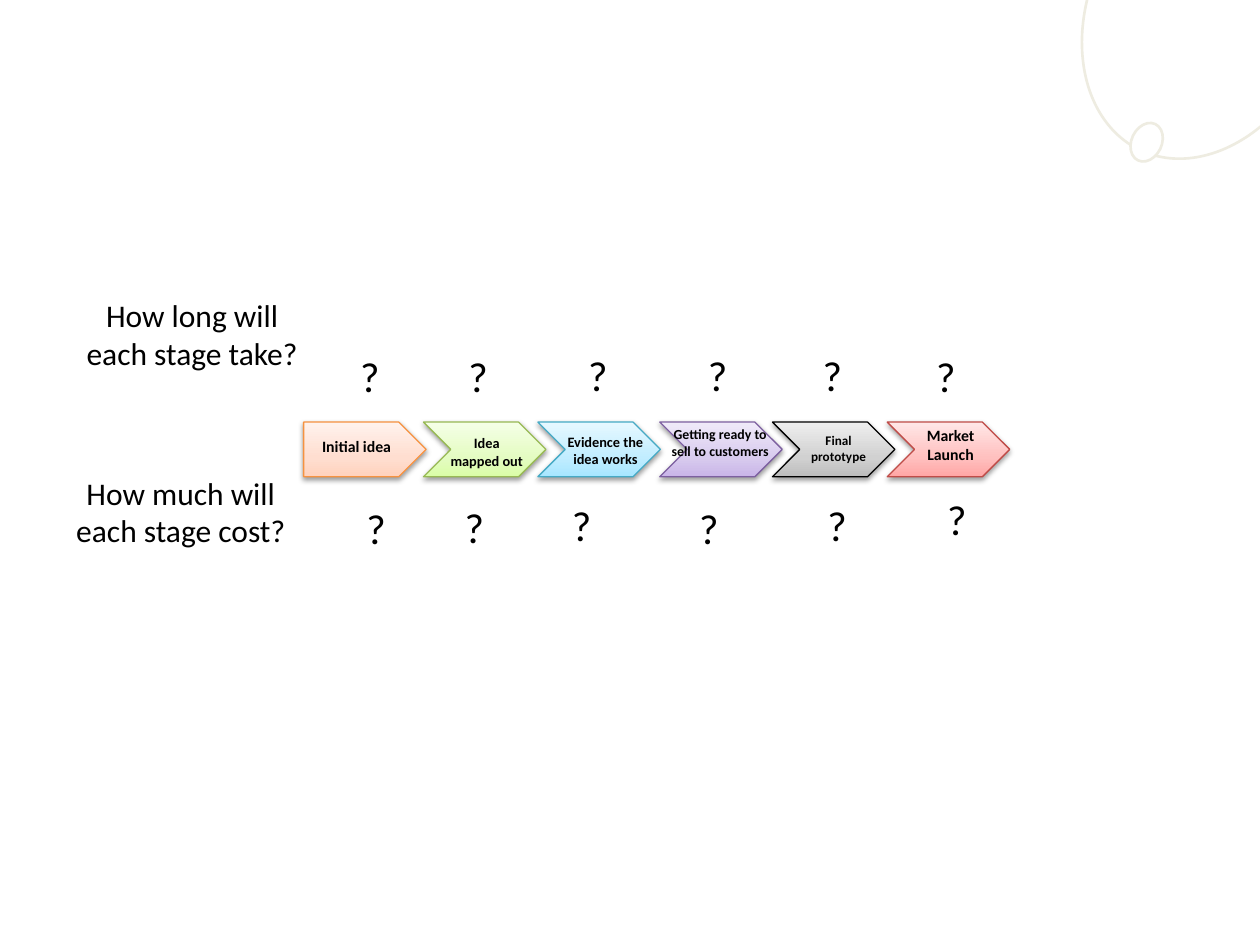
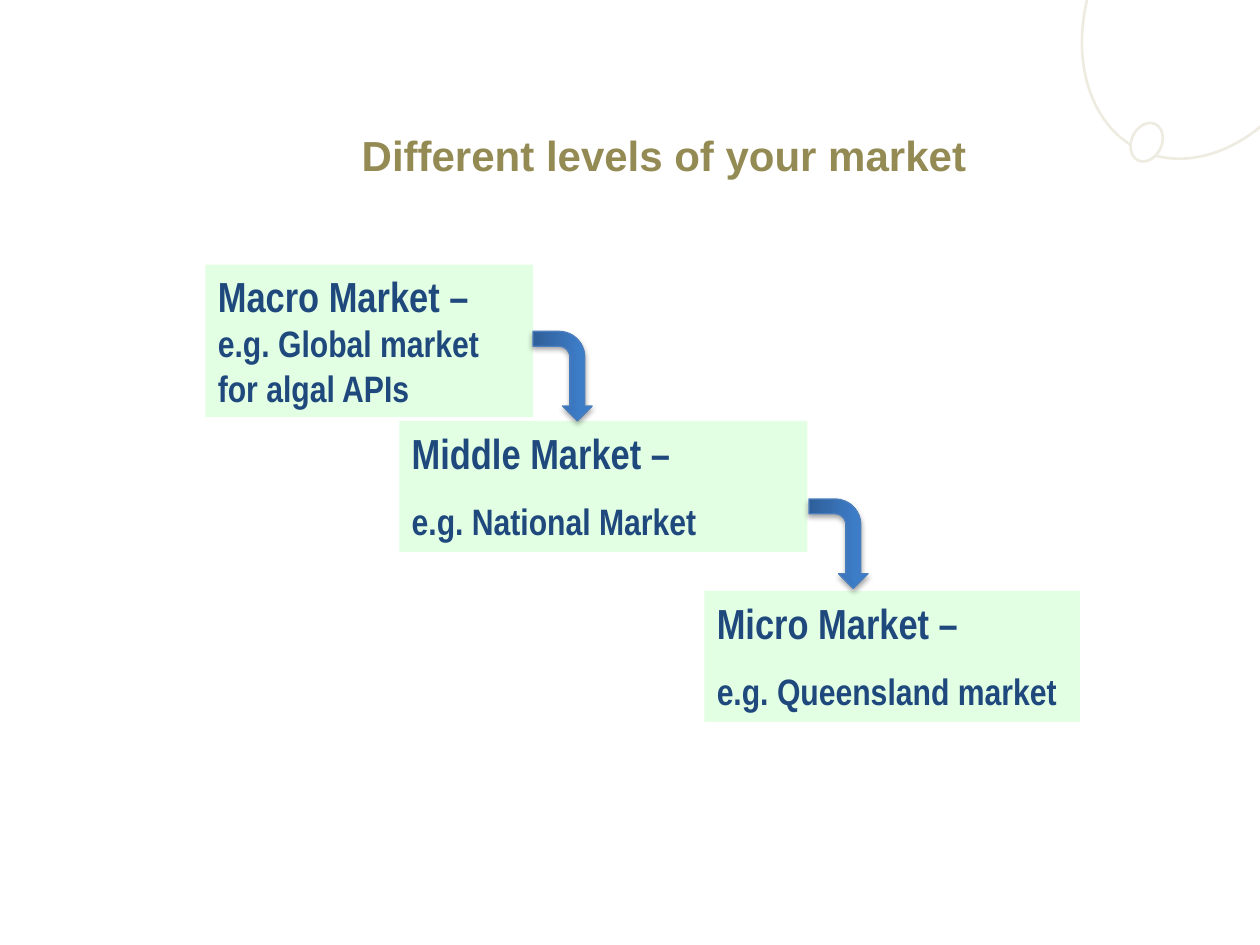
from copy import deepcopy
from lxml.etree import SubElement
from pptx import Presentation
from pptx.dml.color import RGBColor
from pptx.enum.shapes import MSO_SHAPE
from pptx.enum.text import MSO_ANCHOR, PP_ALIGN
from pptx.oxml.ns import qn
from pptx.util import Pt

RINGS = [(622.8, -82.8, 133.2, 177.1, None), (646.6, 69.8, 17.3, 23, "FFFFFF")]
RING = "EEECE1"

STAGES = [
    (173.5, ("FFD2BD", "FFDED0", "FFF2ED"), "F69240",
     "Initial idea", (173.5, 246.2, 60.5, 18), 9),
    (242, ("DAFDA7", "E4FCC2", "F5FFE7"), "98B955",
     "Idea mapped out", (249, 244.8, 58.3, 27.4), 8.2),
    (307.4, ("A7E6FF", "C1EDFF", "E7F8FF"), "46AAC5",
     "Evidence the idea works", (311, 244, 70, 27.4), 8.2),
    (377, ("C9B5E8", "D8CBEE", "F0EAF9"), "7D60A0",
     "Getting ready to sell to customers", (376.5, 239.8, 70, 36), 7.9),
    (441.4, ("BDBDBD", "D1D1D1", "EEEEEE"), "000000",
     "Final\nprototype", (444.2, 243.4, 70, 25.2), 7.5),
    (507, ("FFA6A5", "FFC0BF", "FFE7E7"), "BF4C48",
     "Market Launch", (514, 239.8, 58.3, 28.8), 9),
]
ASKS = [
    ("How long will each stage take?", (39.6, 165.6, 140.4, 51)),
    ("How much will each stage cost?", (33.1, 267.1, 140.4, 51)),
]
MARKS = [
    (198.7, 196.5), (260.6, 196.5), (329, 196), (397.4, 196),
    (463, 196), (527.8, 196.5), (202.3, 283.7), (258.5, 283),
    (319.7, 282.2), (392.4, 283.7), (465.8, 282.2), (534.2, 278.6),
]

TITLE = "Different levels of your market"
LEVELS = [
    ((228.2, 240.5, 233.3, 74.9), [["Middle Market –"], ["e.g. National Market"]]),
    ((402.5, 337.7, 214.6, 74.9), [["Micro Market –"], ["e.g. Queensland market"]]),
    ((117.4, 151.2, 187.2, 87.1),
     [["Macro Market – ", "e.g. Global market for algal APIs"]]),
]
BENDS = [(295.9, 198), (453.6, 293.8)]
BLUES = ("2F5F99", "3D7CC7", "3A7CCB")


def tint(code):
    return RGBColor.from_string(code)


def apply(thing, form):
    for key, val in form.items():
        setattr(thing, key, val)


def style(font, face, size, code, bold=False):
    apply(font, {"name": face, "size": Pt(size), "bold": bold})
    font.color.rgb = tint(code)


def draw(slide, kind, box, fill=None, line=None, width=0.75, turn=0):
    item = slide.shapes.add_shape(kind, *map(Pt, box))
    item.rotation = turn
    item.shadow.inherit = False
    if fill:
        item.fill.solid()
        item.fill.fore_color.rgb = tint(fill)
    else:
        item.fill.background()
    if line:
        item.line.color.rgb = tint(line)
        item.line.width = Pt(width)
    else:
        item.line.fill.background()
    return item


def child(node, tag, **vals):
    return SubElement(node, qn(tag), {key: str(val) for key, val in vals.items()})


def shade(item, codes, spots, drop, dark):
    item.fill.gradient()
    item.fill.gradient_angle = 90
    stops = item.element.find(".//" + qn("a:gsLst"))
    stops.append(deepcopy(stops[0]))
    for stop, code, spot in zip(item.fill.gradient_stops, codes, spots):
        stop.color.rgb = tint(code)
        stop.position = spot
    cast = child(item.element.find(".//" + qn("a:effectLst")), "a:outerShdw",
                 blurRad=Pt(3.1), dist=Pt(drop), dir=5400000, rotWithShape=0)
    child(child(cast, "a:srgbClr", val="000000"), "a:alpha", val=dark * 1000)


def write(slide, text, box, size, bold=False, side=PP_ALIGN.CENTER):
    frame = slide.shapes.add_textbox(*map(Pt, box)).text_frame
    apply(frame, {"word_wrap": True, "text": text})
    for para in frame.paragraphs:
        para.alignment = side
        style(para.font, "Calibri", size, "000000", bold)


def rings(deck, slide):
    for *box, fill in RINGS:
        ring = draw(slide, MSO_SHAPE.OVAL, box, fill, RING, 1.5, 25.4)
        deck.slide_master.shapes.element.append(ring.element)


def plan(slide):
    for spot, (left, codes, edge, text, box, size) in enumerate(STAGES):
        kind = MSO_SHAPE.CHEVRON if spot else MSO_SHAPE.PENTAGON
        step = draw(slide, kind, (left, 241.2, 70, 31.2), None, edge)
        shade(step, codes, (0, 0.35, 1), 1.6, 38)
        write(slide, text, box, size, True)
    for text, box in ASKS:
        write(slide, text, box, 18)
    for left, top in MARKS:
        write(slide, "?", (left, top, 28, 36), 24, side=PP_ALIGN.LEFT)


def levels(slide):
    head = slide.shapes.title
    apply(head, dict(zip(("left", "top", "width", "height"),
                         map(Pt, (86.4, 43.2, 586, 90)))))
    apply(head.text_frame, {"text": TITLE, "vertical_anchor": MSO_ANCHOR.MIDDLE})
    para = head.text_frame.paragraphs[0]
    para.alignment = PP_ALIGN.CENTER
    style(para.runs[0].font, "Arial", 24, "948A54", True)

    for box, paras in LEVELS:
        card = draw(slide, MSO_SHAPE.RECTANGLE, box, "CCFFCC")
        child(card.element.spPr.find(".//" + qn("a:srgbClr")), "a:alpha", val=54000)
        frame = card.text_frame
        apply(frame, {"word_wrap": True, "vertical_anchor": MSO_ANCHOR.TOP})
        sizes = iter((24, 21))
        for spot, parts in enumerate(paras):
            para = frame.add_paragraph() if spot else frame.paragraphs[0]
            apply(para, {"alignment": PP_ALIGN.LEFT, "space_before": Pt(12 * spot)})
            for part in parts:
                run = para.add_run()
                run.text = part
                style(run.font, "Arial Narrow", next(sizes), "1F497D", True)

    for left, top in BENDS:
        bend = draw(slide, MSO_SHAPE.BENT_ARROW, (left, top, 51.1, 33.8),
                    None, "4B7EBC", turn=90)
        shade(bend, BLUES, (0, 0.8, 1), 1.8, 35)


def main():
    deck = Presentation()
    apply(deck, {"slide_width": Pt(720), "slide_height": Pt(540)})
    first = deck.slides.add_slide(deck.slide_layouts[6])
    rings(deck, first)
    plan(first)
    levels(deck.slides.add_slide(deck.slide_layouts[5]))
    deck.save("out.pptx")


if __name__ == "__main__":
    main()
